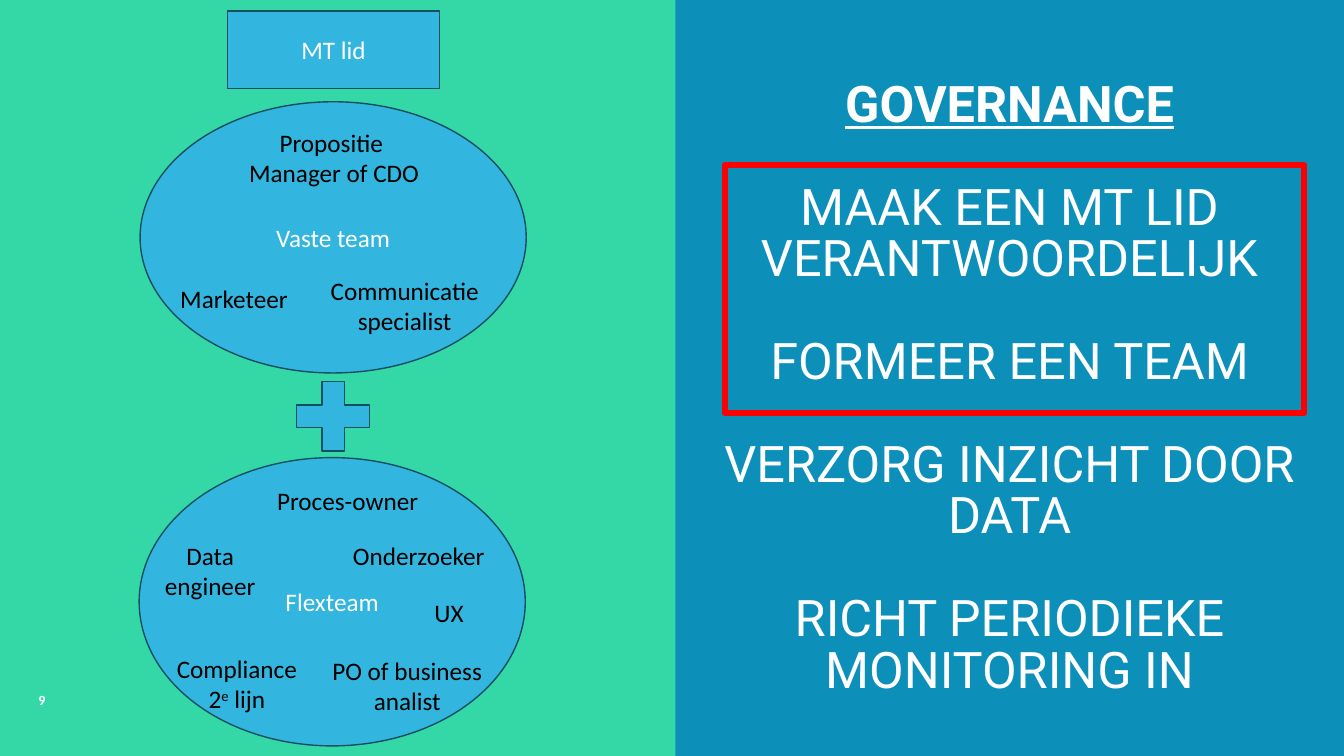
from collections import namedtuple
from dataclasses import dataclass

from lxml import etree
from pptx import Presentation
from pptx.dml.color import RGBColor
from pptx.enum.shapes import MSO_SHAPE
from pptx.enum.text import MSO_ANCHOR, PP_ALIGN
from pptx.oxml.ns import qn
from pptx.util import Pt

RECT, ELLIPSE, PLUS = MSO_SHAPE.RECTANGLE, MSO_SHAPE.OVAL, MSO_SHAPE.MATH_PLUS
TOP, MIDDLE, BOTTOM = MSO_ANCHOR.TOP, MSO_ANCHOR.MIDDLE, MSO_ANCHOR.BOTTOM
CENTER = PP_ALIGN.CENTER

Run = namedtuple("Run", "text bold underline attrs", defaults=(False, False, {}))


@dataclass(frozen=True)
class Theme:
    """Colours, fonts and type sizes of the slide."""
    background: str = "34D8A7"
    panel: str = "027EBF"
    panel_alpha: int = 80
    shape: str = "32B5DF"
    outline: str = "164F62"
    frame: str = "FF0000"
    light: str = "FFFFFF"
    dark: str = "000000"
    body_font: str = "Calibri"
    title_font: str = "Roboto"
    title_size: float = 36
    body_size: float = 18
    number_size: float = 10


class SlideBuilder:
    """Adds styled elements to one slide."""

    def __init__(self, slide, theme):
        self.s, self.theme, self.shapes = slide, theme, slide.shapes
        fill = slide.background.fill
        fill.solid()
        fill.fore_color.rgb = RGBColor.from_string(theme.background)

    def open_group(self):
        """Send the next elements into a new group."""
        self.shapes = self.s.shapes.add_group_shape().shapes

    def close_group(self):
        """Send the next elements to the slide itself."""
        self.shapes = self.s.shapes

    def add_text(self, tf, paragraphs, color, size=None, font=None, anchor=TOP):
        """Fill a text frame with centred paragraphs of runs."""
        tf.vertical_anchor = anchor
        for i, runs in enumerate(paragraphs):
            p = tf.add_paragraph() if i else tf.paragraphs[0]
            p.alignment = CENTER
            for run in runs:
                r = p.add_run()
                r.text = run.text
                r.font.name = font or self.theme.body_font
                r.font.size = Pt(size or self.theme.body_size)
                r.font.bold, r.font.underline = run.bold, run.underline
                r.font.color.rgb = RGBColor.from_string(color)
                for key, value in run.attrs.items():
                    r._r.get_or_add_rPr().set(key, value)

    def shape(self, kind, box, fill=None, line=None, width=1, caption=None):
        """Add a preset shape with an optional caption."""
        sp = self.shapes.add_shape(kind, *map(Pt, box))
        sp.shadow.inherit = False
        if fill:
            sp.fill.solid()
            sp.fill.fore_color.rgb = RGBColor.from_string(fill)
        else:
            sp.fill.background()
        if line:
            sp.line.color.rgb = RGBColor.from_string(line)
            sp.line.width = Pt(width)
        else:
            sp.line.fill.background()
        if caption:
            self.add_text(sp.text_frame, [[Run(caption)]], self.theme.light, anchor=MIDDLE)
        return sp

    def block(self, kind, box, caption=None):
        """Add a blue outlined shape of the diagram."""
        return self.shape(kind, box, self.theme.shape, self.theme.outline, caption=caption)

    def label(self, box, *paragraphs, wrap=False):
        """Add a dark role label."""
        tf = self.shapes.add_textbox(*map(Pt, box)).text_frame
        tf.word_wrap = wrap
        self.add_text(tf, paragraphs, self.theme.dark)

    def number(self, box, text):
        """Add the slide number."""
        tf = self.shapes.add_textbox(*map(Pt, box)).text_frame
        tf.word_wrap = True
        run = Run(text, bold=True, attrs={"spc": "100"})
        self.add_text(tf, [[run]], self.theme.light, self.theme.number_size, anchor=BOTTOM)

    def panel(self, box, heading, points):
        """Add the translucent panel with a heading and its points."""
        t = self.theme
        sp = self.shape(RECT, box, t.panel)
        color = sp._element.spPr.find(qn("a:solidFill"))[0]
        etree.SubElement(color, qn("a:alpha")).set("val", str(t.panel_alpha * 1000))
        tf = sp.text_frame
        tf.word_wrap = True
        tf.margin_left = tf.margin_right = 0
        tf.margin_top, tf.margin_bottom = Pt(58.3), Pt(3.6)
        paragraphs = [[Run(heading, True, True)]] + [[Run(point)] for point in points]
        self.add_text(tf, paragraphs, t.light, t.title_size, t.title_font)
        for i, p in enumerate(tf.paragraphs):
            p.line_spacing = 0.85
            p.space_before = Pt(36.7 if i else 0)
            p.space_after = Pt(0)


def main():
    """Build the governance slide."""
    theme = Theme()
    prs = Presentation()
    prs.slide_width, prs.slide_height = Pt(960), Pt(540)
    b = SlideBuilder(prs.slides.add_slide(prs.slide_layouts[6]), theme)

    b.panel((482.4, 0, 477.6, 540), "GOVERNANCE", [
        "MAAK EEN MT LID VERANTWOORDELIJK",
        "FORMEER EEN TEAM",
        "VERZORG INZICHT DOOR DATA",
        "RICHT PERIODIEKE MONITORING IN",
    ])
    b.number((0, 452.9, 59.8, 56.9), "9")
    b.block(RECT, (162.7, 7.9, 151.2, 55.4), "MT lid")

    b.open_group()
    b.block(ELLIPSE, (100.1, 72.7, 275.8, 193.7), "Vaste team")
    b.label((159.8, 87.1, 157.7, 51.1), [Run("Propositie ")], [Run("Manager of CDO")])
    b.label((121, 198.7, 92.2, 24.5), [Run("Marketeer")])
    b.label((228.2, 193, 121.7, 42.5), [Run("Communicatie")], [Run("specialist")])

    b.open_group()
    b.block(ELLIPSE, (99.4, 326.9, 275.8, 205.9), "Flexteam")
    b.label((185, 343.4, 126.7, 28.8), [Run("Proces-owner")])
    b.label((111.6, 463, 115.2, 51.1), [Run("Compliance")],
            [Run("2"), Run("e", attrs={"baseline": "30000"}), Run(" lijn")])
    b.label((229.7, 464.4, 122.4, 51.1), [Run("PO of business")], [Run("analist")])
    b.label((303.1, 423.4, 35.3, 28.8), [Run("UX")])
    b.label((103.7, 382.3, 92.9, 51.1), [Run("Data engineer")], wrap=True)

    b.close_group()
    b.block(PLUS, (202.3, 263.5, 71.3, 67.7))
    b.shape(RECT, (517.7, 118.1, 414, 177.1), line=theme.frame, width=4.5)
    b.label((236.9, 382.3, 124.6, 28.8), [Run("Onderzoeker")])

    prs.save("out.pptx")


if __name__ == "__main__":
    main()
